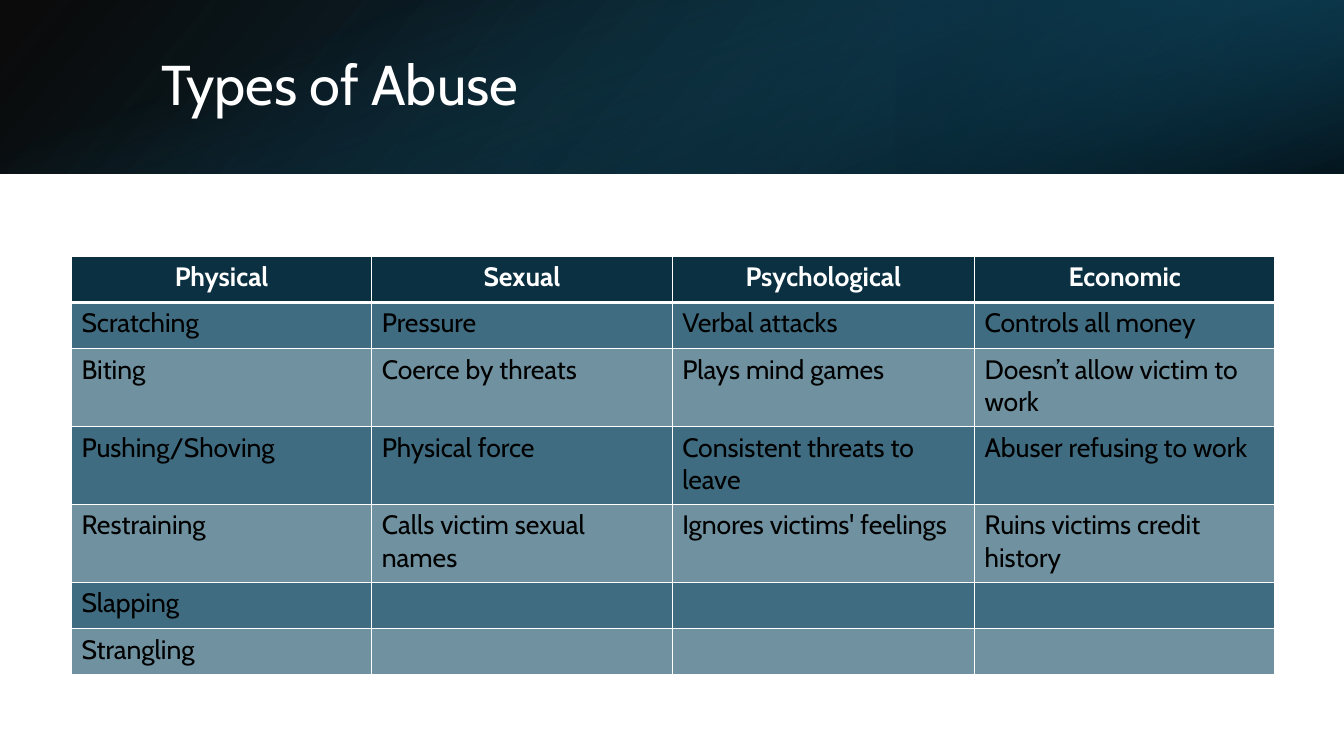
"""Build the slide on types of abuse: a shaded title band over a table."""

import dataclasses

import lxml.etree
import pptx
import pptx.dml.color
import pptx.enum.shapes
import pptx.enum.text
import pptx.oxml.ns
import pptx.slide
import pptx.table
import pptx.text.text
import pptx.util

Cm = pptx.util.Cm
Pt = pptx.util.Pt
qn = pptx.oxml.ns.qn

FONT = "Cabin"
WHITE = "FFFFFF"
BLACK = "000000"
NAVY = "0B3041"
TEAL = "104862"
BLUE = "156082"
WIDE, HIGH = 33.87, 19.05
BAND = 4.38


@dataclasses.dataclass
class Stop:
    """One colour of a gradient."""

    place: float
    hue: str
    alpha: int = 100


@dataclasses.dataclass
class Layer:
    """One gradient sheet of the title band."""

    left: float
    top: float
    width: float
    height: float
    angle: int
    stops: tuple[Stop, Stop]
    turn: int = 0
    flip: bool = False


LAYERS = [
    Layer(0, 0, WIDE, BAND, 140, (Stop(0, BLACK, 96), Stop(1, TEAL)), flip=True),
    Layer(WIDE * 2 / 3, 0, WIDE / 3, BAND, 320,
          (Stop(0.19, NAVY, 68), Stop(1, BLUE, 79)), 180, True),
    Layer((WIDE - BAND) / 2, (BAND - WIDE) / 2, BAND, WIDE, 340,
          (Stop(0.23, BLUE, 0), Stop(0.99, BLACK, 74)), 90),
]

COLS = [7.57, 7.57, 7.62, 7.57]
LOW, TALL = 1.17, 1.96
ROWS = [
    (LOW, ["Physical", "Sexual", "Psychological", "Economic"]),
    (LOW, ["Scratching", "Pressure", "Verbal attacks", "Controls all money"]),
    (TALL, ["Biting", "Coerce by threats", "Plays mind games",
            "Doesn’t allow victim to work"]),
    (TALL, ["Pushing/Shoving", "Physical force", "Consistent threats to leave",
            "Abuser refusing to work"]),
    (TALL, ["Restraining", "Calls victim sexual names",
            "Ignores victims' feelings", "Ruins victims credit history"]),
    (LOW, ["Slapping", "", "", ""]),
    (LOW, ["Strangling", "", "", ""]),
]


def color(hue: str) -> pptx.dml.color.RGBColor:
    """Turn a hex string into a colour."""
    return pptx.dml.color.RGBColor.from_string(hue)


def fade(node: lxml.etree._Element, alpha: int) -> None:
    """Set the opacity of a colour node in percent."""
    if alpha < 100:
        lxml.etree.SubElement(node, qn("a:alpha")).set("val", str(alpha * 1000))


def write(para: pptx.text.text._Paragraph, text: str, size: int, hue: str,
          bold: bool = False) -> None:
    """Add one run to a paragraph."""
    run = para.add_run()
    run.text = text
    run.font.name = FONT
    run.font.size = Pt(size)
    run.font.bold = bold
    run.font.color.rgb = color(hue)


def draw_layer(slide: pptx.slide.Slide, layer: Layer) -> None:
    """Draw one gradient sheet."""
    shape = slide.shapes.add_shape(
        pptx.enum.shapes.MSO_SHAPE.RECTANGLE, Cm(layer.left), Cm(layer.top),
        Cm(layer.width), Cm(layer.height))
    shape.shadow.inherit = False
    shape.line.fill.background()
    shape.rotation = layer.turn
    props = shape._element.spPr
    if layer.flip:
        props.find(qn("a:xfrm")).set("flipH", "1")
    shape.fill.gradient()
    shape.fill.gradient_angle = 360 - layer.angle
    for mark, stop in zip(shape.fill.gradient_stops, layer.stops):
        mark.position = stop.place
        mark.color.rgb = color(stop.hue)
    for node, stop in zip(list(props.iter(qn("a:srgbClr"))), layer.stops):
        fade(node, stop.alpha)


def draw_title(slide: pptx.slide.Slide) -> None:
    """Write the title over the band."""
    box = slide.shapes.add_textbox(Cm(3.81), Cm(0.97), Cm(27.89), Cm(2.44))
    frame = box.text_frame
    frame.word_wrap = True
    frame.vertical_anchor = pptx.enum.text.MSO_ANCHOR.MIDDLE
    para = frame.paragraphs[0]
    para.line_spacing = 0.9
    write(para, "Types of Abuse", 40, WHITE)


def edge(cell: pptx.table._Cell, side: str, width: float) -> None:
    """Draw one white border of a cell."""
    line = lxml.etree.SubElement(cell._tc.get_or_add_tcPr(), qn(f"a:ln{side}"))
    line.set("w", str(Pt(width)))
    fill = lxml.etree.SubElement(line, qn("a:solidFill"))
    lxml.etree.SubElement(fill, qn("a:srgbClr")).set("val", str(color(WHITE)))


def draw_cell(cell: pptx.table._Cell, text: str, row: int) -> None:
    """Fill, frame and write one cell."""
    head = row == 0
    for side in "LRTB":
        thick = (row, side) in ((0, "B"), (1, "T"))
        edge(cell, side, 3 if thick else 1)
    cell.fill.solid()
    cell.fill.fore_color.rgb = color(NAVY if head else TEAL)
    if not head:
        node = cell._tc.tcPr.find(qn("a:solidFill")).find(qn("a:srgbClr"))
        fade(node, 80 if row % 2 else 60)
    para = cell.text_frame.paragraphs[0]
    if head:
        para.alignment = pptx.enum.text.PP_ALIGN.CENTER
    if text:
        write(para, text, 19, WHITE if head else BLACK, head)


def draw_table(slide: pptx.slide.Slide) -> None:
    """Draw the table of abuse types."""
    table = slide.shapes.add_table(
        len(ROWS), len(COLS), Cm(1.8), Cm(6.45), Cm(sum(COLS)),
        Cm(sum(high for high, _ in ROWS))).table
    table.horz_banding = False
    for col, width in zip(table.columns, COLS):
        col.width = Cm(width)
    for row, (high, texts) in enumerate(ROWS):
        table.rows[row].height = Cm(high)
        for col, text in enumerate(texts):
            draw_cell(table.cell(row, col), text, row)


def main() -> None:
    """Build and save the slide."""
    deck = pptx.Presentation()
    deck.slide_width = Cm(WIDE)
    deck.slide_height = Cm(HIGH)
    slide = deck.slides.add_slide(deck.slide_layouts[6])
    for layer in LAYERS:
        draw_layer(slide, layer)
    draw_title(slide)
    draw_table(slide)
    deck.save("out.pptx")


if __name__ == "__main__":
    main()
